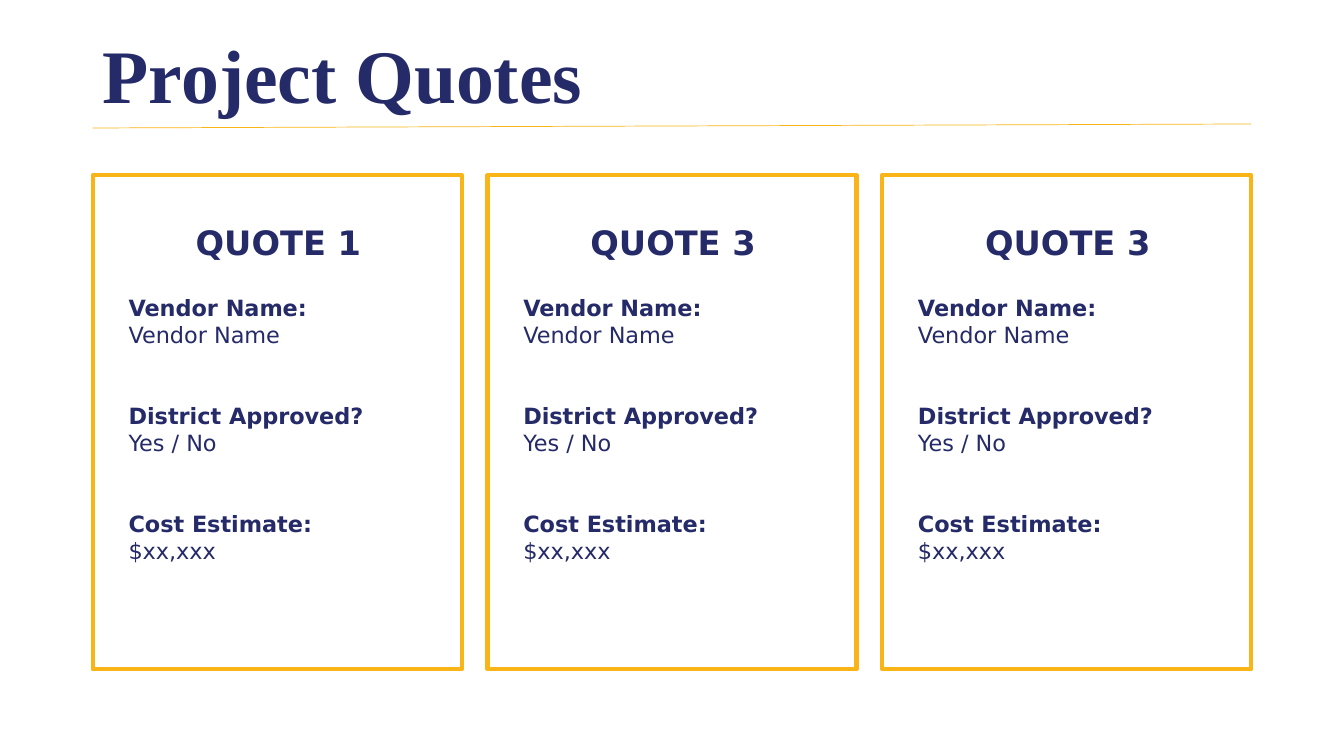
from pptx import Presentation
from pptx.dml.color import RGBColor
from pptx.enum.shapes import MSO_CONNECTOR, MSO_SHAPE
from pptx.enum.text import MSO_ANCHOR, MSO_AUTO_SIZE, PP_ALIGN
from pptx.oxml.ns import qn
from pptx.util import Inches, Pt
from lxml.etree import SubElement

COLORS = {"navy": "252A68", "gold": "F9B417", "white": "FFFFFF"}
LEFT, CONTENT_WIDTH = 0.92, 11.49
CARD_TOP, CARD_WIDTH, CARD_HEIGHT = 1.74, 3.66, 4.9
QUOTES = ["QUOTE 1", "QUOTE 3", "QUOTE 3"]
FIELDS = [
    ("Vendor Name:", "Vendor Name"),
    ("District Approved?", "Yes / No"),
    ("Cost Estimate:", "$xx,xxx"),
]


def color(name):
    return RGBColor.from_string(COLORS[name])


def style(para, size, bold, font="DejaVu Sans"):
    para.font.name = font
    para.font.size = Pt(size)
    para.font.bold = bold
    para.font.color.rgb = color("navy")


def add_header(page, left, top, width, height):
    title = page.shapes.title
    title.left, title.top = Inches(left), Inches(top)
    title.width, title.height = Inches(width), Inches(height)
    frame = title.text_frame
    frame.text = "Project Quotes"
    frame.auto_size = MSO_AUTO_SIZE.NONE
    frame.vertical_anchor = MSO_ANCHOR.BOTTOM
    para = frame.paragraphs[0]
    para.alignment = PP_ALIGN.LEFT
    style(para, 54, True, "Times New Roman")

    bottom = top + height
    rule = page.shapes.add_connector(
        MSO_CONNECTOR.STRAIGHT, Inches(left), Inches(bottom + 0.04),
        Inches(left + width), Inches(bottom))
    rule.line.color.rgb = color("gold")
    rule.line.width = Pt(0.5)
    SubElement(rule._element.spPr, qn("a:effectLst"))


def add_line(frame, text, bold, gap=0):
    para = frame.add_paragraph()
    para.text = text
    para.line_spacing = Pt(19.3)
    para.space_before = Pt(gap)
    style(para, 16, bold)


def add_card(page, heading, left, top, width, height):
    card = page.shapes.add_shape(
        MSO_SHAPE.RECTANGLE, Inches(left), Inches(top), Inches(width), Inches(height))
    card.shadow.inherit = False
    card.fill.solid()
    card.fill.fore_color.rgb = color("white")
    card.line.color.rgb = color("gold")
    card.line.width = Pt(3)

    box = page.shapes.add_textbox(
        Inches(left + 0.07 * width), Inches(top + 0.4),
        Inches(0.866 * width), Inches(0.72 * height))
    frame = box.text_frame
    frame.word_wrap = True
    para = frame.paragraphs[0]
    para.text = heading
    para.alignment = PP_ALIGN.CENTER
    para.line_spacing = Pt(30)
    style(para, 24, True)
    for index, (label, value) in enumerate(FIELDS):
        add_line(frame, label, True, 38.6 if index else 22.5)
        add_line(frame, value, False)


def main():
    deck = Presentation()
    deck.slide_width, deck.slide_height = Inches(13.33), Inches(7.5)
    page = deck.slides.add_slide(deck.slide_layouts[5])
    add_header(page, LEFT, 0.22, CONTENT_WIDTH, 1.01)
    pitch = (CONTENT_WIDTH - CARD_WIDTH) / (len(QUOTES) - 1)
    for column, heading in enumerate(QUOTES):
        add_card(page, heading, LEFT + column * pitch, CARD_TOP, CARD_WIDTH, CARD_HEIGHT)
    deck.save("out.pptx")


if __name__ == "__main__":
    main()
